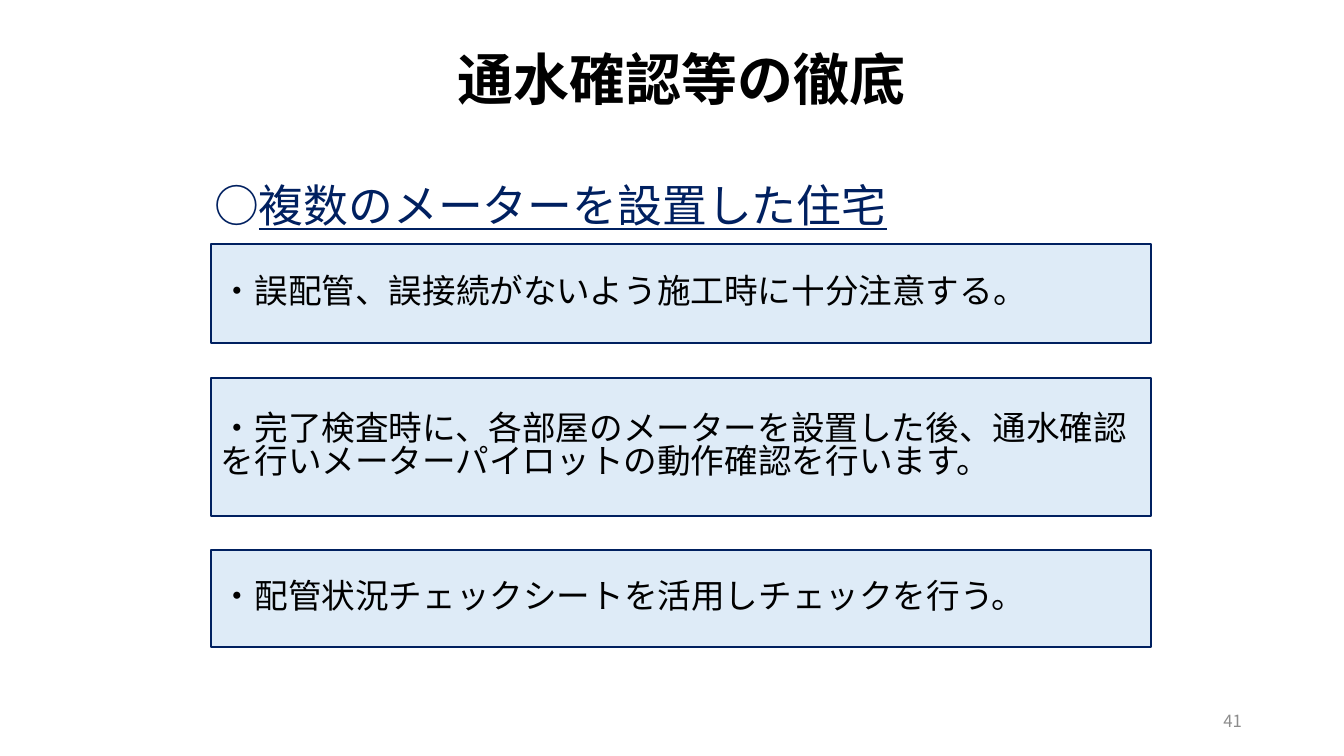
from pptx import Presentation
from pptx.dml.color import RGBColor
from pptx.enum.shapes import MSO_SHAPE as Shape
from pptx.enum.text import MSO_ANCHOR as Anchor, PP_ALIGN as Align
from pptx.oxml.ns import qn
from pptx.util import Pt
from lxml.etree import SubElement

EMU_PER_PX = 914400 / 100.8
FONT = "Noto Sans CJK JP"
COLORS = {"ink": "000000", "navy": "002060", "pale": "DEEBF7", "white": "FFFFFF", "gray": "8C8C8C"}
MEASURES = [
    (244, 99, "・誤配管、誤接続がないよう施工時に十分注意する。"),
    (378, 138, "・完了検査時に、各部屋のメーターを設置した後、通水確認を行いメーターパイロットの動作確認を行います。"),
    (550, 97, "・配管状況チェックシートを活用しチェックを行う。"),
]


def px(*lengths):
    return [round(length * EMU_PER_PX) for length in lengths]


def color(name):
    return RGBColor.from_string(COLORS[name])


def write(holder, runs, size, ink, align=Align.LEFT, anchor=Anchor.MIDDLE, bold=False, spacing=1.0):
    frame = holder.text_frame
    frame.word_wrap = True
    frame.vertical_anchor = anchor
    paragraph = frame.paragraphs[0]
    paragraph.alignment = align
    paragraph.line_spacing = spacing
    for words, underline in runs:
        run = paragraph.add_run()
        run.text = words
        formats = {"name": FONT, "size": Pt(size), "bold": bold, "underline": underline}
        for key, value in formats.items():
            setattr(run.font, key, value)
        run.font.color.rgb = color(ink)
        SubElement(run.font._element, qn("a:ea"), typeface=FONT)


def add_panel(slide, place, fill, outline=None):
    panel = slide.shapes.add_shape(Shape.RECTANGLE, *px(*place))
    panel.shadow.inherit = False
    panel.fill.solid()
    panel.fill.fore_color.rgb = color(fill)
    if outline:
        panel.line.color.rgb = color(outline)
        panel.line.width = Pt(1)
    else:
        panel.line.fill.background()
    return panel


def add_title(slide, words):
    title = slide.shapes.title
    for side, length in zip(("left", "top", "width", "height"), px(323, 47, 717, 104)):
        setattr(title, side, length)
    write(title, [(words, False)], 40, "ink", Align.CENTER, Anchor.TOP, True, 0.9)


def add_heading(slide, mark, words):
    heading = add_panel(slide, (179, 149, 743, 111), "white")
    write(heading, [(mark, False), (words, True)], 32, "navy", Align.CENTER)


def add_measure(slide, top, height, words):
    measure = add_panel(slide, (211, top, 940, height), "pale", "navy")
    write(measure, [(words, False)], 24, "ink", spacing=0.82)


def add_page_number(slide, number):
    page_number = slide.shapes.add_textbox(*px(950, 701, 302, 40))
    write(page_number, [(number, False)], 12, "gray", Align.RIGHT)


def main():
    """Build the slide on checking water flow in homes with several meters."""
    deck = Presentation()
    deck.slide_width, deck.slide_height = px(1344, 756)
    slide = deck.slides.add_slide(deck.slide_layouts[5])
    add_title(slide, "通水確認等の徹底")
    add_heading(slide, "○", "複数のメーターを設置した住宅")
    for top, height, words in MEASURES:
        add_measure(slide, top, height, words)
    add_page_number(slide, "41")
    deck.save("out.pptx")


if __name__ == "__main__":
    main()
